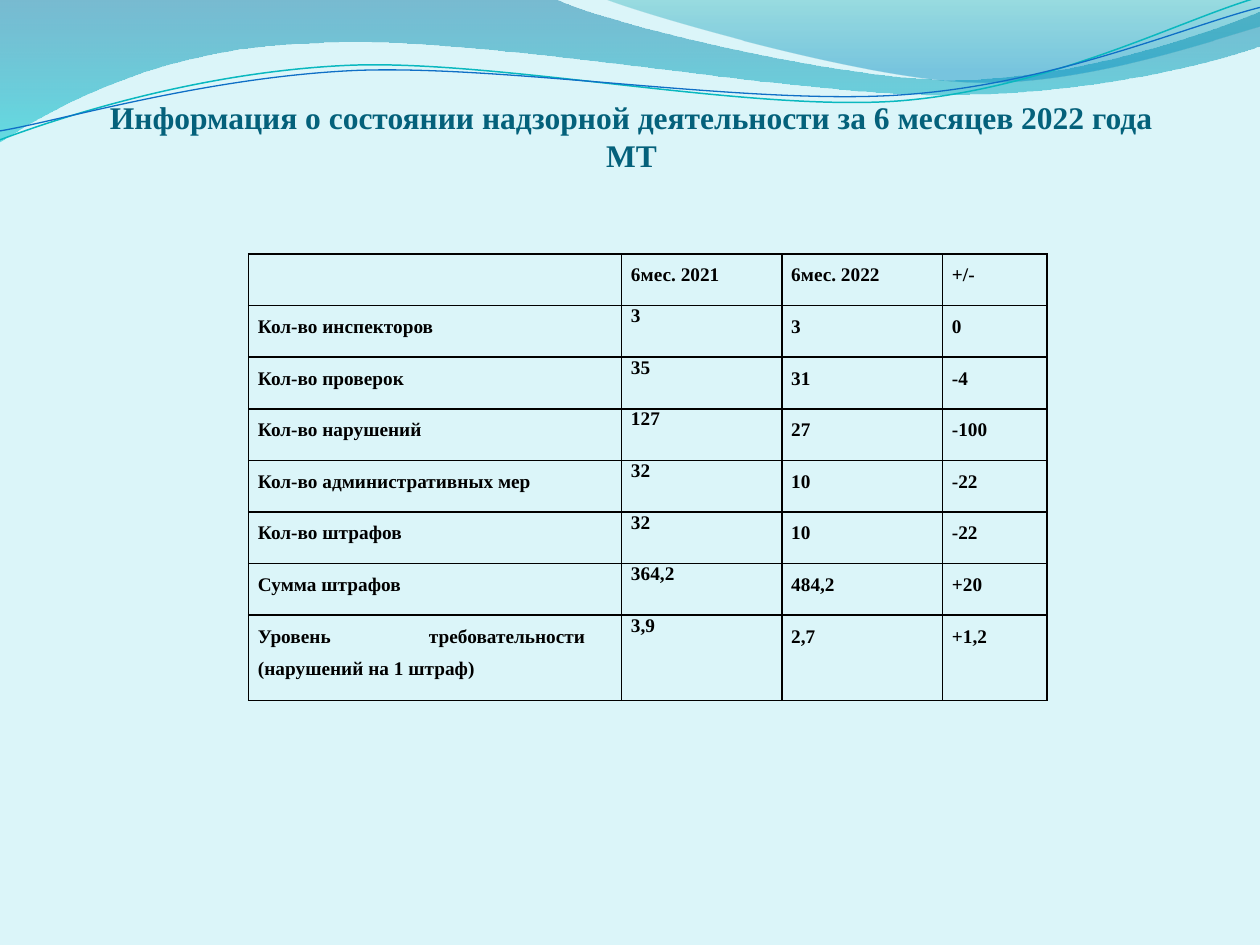
import pptx
import pptx.dml.color
import pptx.enum.text
import pptx.oxml
import pptx.oxml.ns
import pptx.util
from pptx.util import Cm

RGBColor = pptx.dml.color.RGBColor
ALIGN = pptx.enum.text.PP_ALIGN
ANCHOR = pptx.enum.text.MSO_ANCHOR

BACKGROUND = RGBColor(0xDB, 0xF5, 0xF9)
TITLE_COLOR = RGBColor(0x04, 0x61, 0x7B)
BLACK = RGBColor(0, 0, 0)
TEAL_LINE = RGBColor(0x0A, 0xB8, 0xBF)
BLUE_LINE = RGBColor(0x0F, 0x6F, 0xC6)
# Gradient stops: position, colour, opacity in percent
LARGE_WAVE_STOPS = [(0, RGBColor(0x00, 0x74, 0xA1), 45), (1, RGBColor(0x00, 0xC6, 0xCF), 55)]
SMALL_WAVE_STOPS = [(0, RGBColor(0x00, 0xA1, 0xA9), 30), (0.8, RGBColor(0x00, 0x8B, 0xBF), 45)]

# Outlines in centimetres: one point is a straight segment, three are a cubic curve
LARGE_WAVE = [
    [(0, 0)],
    [(11.18, -0.03)],
    [(12.09, 0.43), (16.87, 1.6), (19.25, 1.6)],
    [(21.67, 1.6), (24.33, 0.66), (25.4, 0.23)],
    [(25.43, 0.91)],
    [(24.97, 1.12), (22.1, 1.93), (18.95, 1.91)],
    [(15.8, 1.91), (9.7, 0.71), (6.53, 0.86)],
    [(3.28, 0.91), (1.17, 2.11), (-0.03, 2.87)],
    [(0, 0)],
]
SMALL_WAVE = [
    [(12.17, -0.03)],
    [(12.93, 0.28), (17.32, 1.57), (19.53, 1.65)],
    [(21.74, 1.75), (24.41, 0.81), (25.4, 0.53)],
    [(25.4, 0)],
    [(12.17, -0.03)],
]
TEAL_CURVE = [
    [(-0.05, 2.22)],
    [(1.19, 1.82), (4.02, 1.04), (7.05, 1.05)],
    [(10.05, 1.07), (15.02, 2.37), (18.08, 2.29)],
    [(21.13, 2.2), (23.87, 0.91), (25.41, 0.55)],
]
BLUE_CURVE = [
    [(-0.04, 2.04)],
    [(1.16, 1.9), (4.18, 1.15), (7.2, 1.16)],
    [(10.25, 1.19), (15.13, 2.25), (18.18, 2.17)],
    [(21.21, 2.1), (23.93, 1.06), (25.45, 0.75)],
]
CURVE_ROTATION = 357.3

TITLE = "Информация о состоянии надзорной деятельности за 6 месяцев 2022 года\vМТ"
ROWS = [
    ("", "6мес. 2021", "6мес. 2022", "+/-"),
    ("Кол-во инспекторов", "3", "3", "0"),
    ("Кол-во проверок", "35", "31", "-4"),
    ("Кол-во нарушений", "127", "27", "-100"),
    ("Кол-во административных мер", "32", "10", "-22"),
    ("Кол-во штрафов", "32", "10", "-22"),
    ("Сумма штрафов", "364,2", "484,2", "+20"),
    ("Уровень требовательности (нарушений на 1 штраф)", "3,9", "2,7", "+1,2"),
]
COLUMN_WIDTHS = [7.52, 3.23, 3.24, 2.11]
ROW_HEIGHT, LAST_ROW_HEIGHT = 1.04, 1.72


def write_text(text_frame, text, size=11, color=BLACK, align=ALIGN.LEFT, spacing=None):
    paragraph = text_frame.paragraphs[0]
    paragraph.text = text
    paragraph.alignment = align
    paragraph.line_spacing = spacing
    for item in [paragraph, *paragraph.runs]:
        item.font.name = "Times New Roman"
        item.font.size = pptx.util.Pt(size)
        item.font.bold = True
        item.font.color.rgb = color
    return paragraph


def add_outline(slide, left, top, segments, close):
    points = [(Cm(x), Cm(y)) for segment in segments for x, y in segment]
    builder = slide.shapes.build_freeform(*points[0])
    builder.add_line_segments(points[1:], close=close)
    shape = builder.convert_to_shape(left, top)
    shape.shadow.inherit = False
    # Join each three straight steps of a curve into one cubic segment
    steps = iter(shape.element.findall(".//" + pptx.oxml.ns.qn("a:lnTo")))
    for segment in segments[1:]:
        group = [next(steps) for point in segment]
        if len(group) == 3:
            curve = pptx.oxml.parse_xml(f'<a:cubicBezTo {pptx.oxml.ns.nsdecls("a")}/>')
            group[0].addprevious(curve)
            for step in group:
                curve.append(step[0])
                step.getparent().remove(step)
    return shape


def add_waves(slide, left, top):
    # Translucent gradient bands
    for segments, stops in [(LARGE_WAVE, LARGE_WAVE_STOPS), (SMALL_WAVE, SMALL_WAVE_STOPS)]:
        shape = add_outline(slide, left, top, segments, close=True)
        shape.line.fill.background()
        shape.fill.gradient()
        shape.fill.gradient_angle = 270
        for stop, (position, color, opacity) in zip(shape.fill.gradient_stops, stops):
            stop.position = position
            stop.color.rgb = color
        color_elements = shape.element.findall(".//" + pptx.oxml.ns.qn("a:gs") + "/*")
        for element, (position, color, opacity) in zip(color_elements, stops):
            element.append(pptx.oxml.parse_xml(
                f'<a:alpha {pptx.oxml.ns.nsdecls("a")} val="{opacity * 1000}"/>'))

    # Thin curves, slightly turned
    for segments, color, width in [(TEAL_CURVE, TEAL_LINE, 0.85), (BLUE_CURVE, BLUE_LINE, 0.75)]:
        shape = add_outline(slide, left, top, segments, close=False)
        shape.rotation = CURVE_ROTATION
        shape.fill.background()
        shape.line.color.rgb = color
        shape.line.width = pptx.util.Pt(width)


def place_title(slide, left, top, width, height):
    title = slide.shapes.title
    title.left, title.top, title.width, title.height = left, top, width, height
    frame = title.text_frame
    frame.auto_size = pptx.enum.text.MSO_AUTO_SIZE.NONE
    frame.word_wrap = True
    frame.vertical_anchor = ANCHOR.BOTTOM
    frame.margin_left = frame.margin_right = frame.margin_bottom = 0
    frame.margin_top = Cm(0.13)
    write_text(frame, TITLE, size=18, color=TITLE_COLOR, align=ALIGN.CENTER)
    # Bring the title in front of the waves
    title.element.getparent().append(title.element)


def add_borders(cell):
    properties = cell._tc.get_or_add_tcPr()
    for index, side in enumerate(("lnL", "lnR", "lnT", "lnB")):
        properties.insert(index, pptx.oxml.parse_xml(
            f'<a:{side} {pptx.oxml.ns.nsdecls("a")} w="12700">'
            f'<a:solidFill><a:srgbClr val="{BLACK}"/></a:solidFill></a:{side}>'))


def add_results_table(slide, left, top):
    heights = [ROW_HEIGHT] * (len(ROWS) - 1) + [LAST_ROW_HEIGHT]
    frame = slide.shapes.add_table(
        len(ROWS), len(COLUMN_WIDTHS), left, top, Cm(sum(COLUMN_WIDTHS)), Cm(sum(heights)))
    table = frame.table
    table.first_row = table.horz_banding = False
    for column, width in zip(table.columns, COLUMN_WIDTHS):
        column.width = Cm(width)
    for row, height in zip(table.rows, heights):
        row.height = Cm(height)
    for row_index, values in enumerate(ROWS):
        for column_index, value in enumerate(values):
            cell = table.cell(row_index, column_index)
            cell.fill.background()
            add_borders(cell)
            cell.margin_left = cell.margin_right = Cm(0.19)
            cell.margin_top = cell.margin_bottom = 0
            # Values of the earlier year are set tight, all else is justified
            is_tight = row_index > 0 and column_index == 1
            paragraph = write_text(
                cell.text_frame, value,
                align=ALIGN.LEFT if is_tight else ALIGN.JUSTIFY,
                spacing=None if is_tight else 1.5)
            if column_index == 0:
                paragraph._p.get_or_add_pPr().set("marR", str(Cm(0.54)))


def main():
    presentation = pptx.Presentation()
    presentation.slide_width, presentation.slide_height = Cm(25.4), Cm(19.05)
    slide = presentation.slides.add_slide(presentation.slide_layouts[5])
    slide.background.fill.solid()
    slide.background.fill.fore_color.rgb = BACKGROUND
    add_waves(slide, Cm(0), Cm(0))
    place_title(slide, Cm(1.3), Cm(2.33), Cm(22.86), Cm(1.17))
    add_results_table(slide, Cm(5.01), Cm(5.12))
    presentation.save("out.pptx")


if __name__ == "__main__":
    main()
